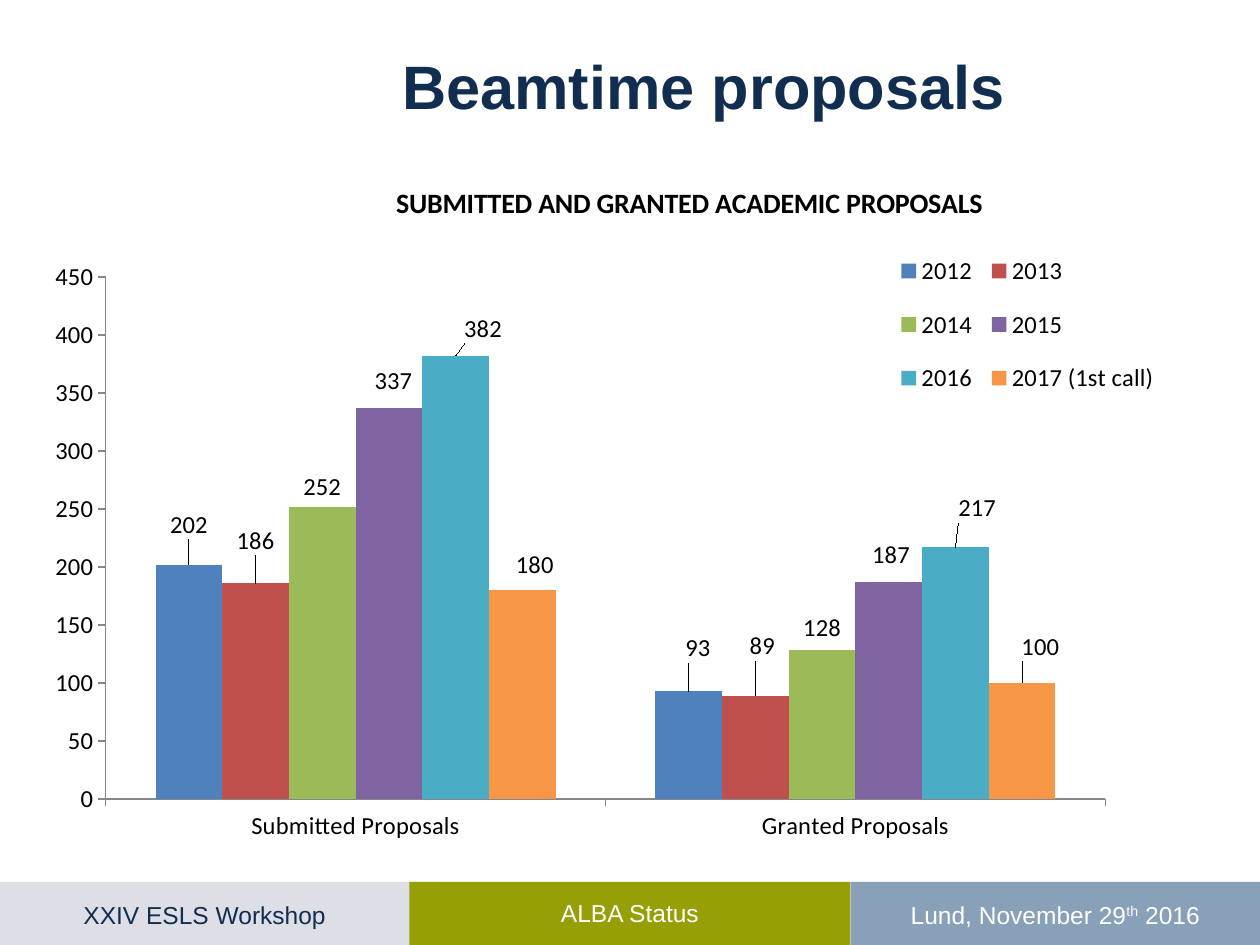
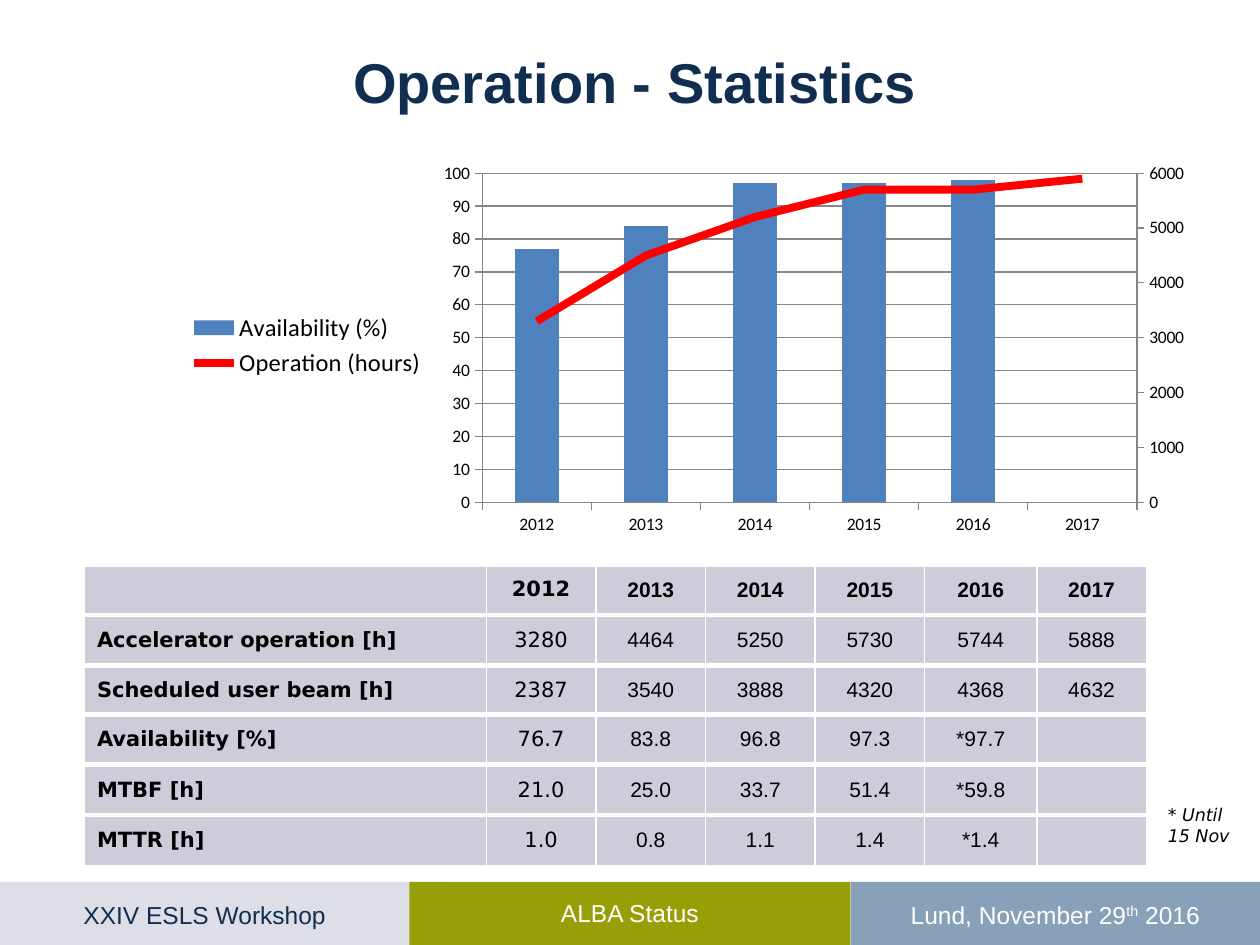
from dataclasses import dataclass

from lxml.etree import SubElement
from pptx import Presentation
from pptx.chart.data import CategoryChartData
from pptx.dml.color import RGBColor
from pptx.enum.chart import (XL_CHART_TYPE, XL_LABEL_POSITION, XL_LEGEND_POSITION,
                             XL_TICK_MARK)
from pptx.enum.shapes import MSO_SHAPE
from pptx.enum.text import MSO_ANCHOR, PP_ALIGN
from pptx.oxml import parse_xml
from pptx.oxml.ns import nsdecls, qn
from pptx.util import Inches, Pt


@dataclass(frozen=True)
class Theme:
    navy: str = "112E50"
    white: str = "FFFFFF"
    black: str = "000000"
    bands: tuple = ("DEDFE6", "979F07", "88A0B8")
    cell: str = "CDCDDA"
    axis: str = "868686"
    red: str = "FF0000"
    series: tuple = ("4F81BD", "C0504D", "9BBB59", "8064A2", "4BACC6", "F79646")
    head_font: str = "Arial"
    table_font: str = "DejaVu Sans"
    chart_font: str = "Calibri"
    footer_size: int = 14
    table_size: int = 12
    small_size: int = 10
    chart_size: int = 14
    chart_title_size: int = 16


T = Theme()


def rgb(value):
    return RGBColor.from_string(value)


def style(font, size, color, name, bold=False, italic=False):
    font.size, font.name = Pt(size), name
    font.bold, font.italic = bold, italic
    font.color.rgb = rgb(color)


# Text and footer
def add_text(s, at, runs, size, color, name=T.head_font, align=PP_ALIGN.CENTER,
             bold=False, italic=False):
    tf = s.shapes.add_textbox(*map(Inches, at)).text_frame
    tf.word_wrap = True
    p = tf.paragraphs[0]
    p.alignment = align
    for text in runs:
        p.add_run().text = text
    style(p.font, size, color, name, bold, italic)
    return p


def add_title(s, at, text, size):
    add_text(s, at, [text], size, T.navy, bold=True)


def add_footer(s):
    for left, width, color in zip((0, 3.25, 6.75), (3.5, 3.5, 3.25), T.bands):
        sp = s.shapes.add_shape(MSO_SHAPE.RECTANGLE, Inches(left), Inches(7),
                                Inches(width), Inches(0.5))
        sp.shadow.inherit = False
        sp.fill.solid()
        sp.fill.fore_color.rgb = rgb(color)
        sp.line.fill.background()
    add_text(s, (0, 7.09, 3.25, 0.33), ["XXIV ESLS Workshop"], T.footer_size, T.navy)
    add_text(s, (3.25, 7.08, 3.5, 0.34), ["ALBA Status"], T.footer_size, T.white)
    p = add_text(s, (6.75, 7.09, 3.25, 0.34), ["Lund, November 29", "th", " 2016"],
                 T.footer_size, T.white)
    p.runs[1].font._element.set("baseline", "30000")


# Chart parts
def set_layout(parent, x, y, w=None, h=None, after=None, inner=False, edge=True):
    """Place a chart part by fractions of the chart's size."""
    for old in parent.findall(qn("c:layout")):
        parent.remove(old)
    layout = parse_xml(f'<c:layout {nsdecls("c")}><c:manualLayout/></c:layout>')
    values = [("layoutTarget", "inner")] if inner else []
    if edge:
        values += [("xMode", "edge"), ("yMode", "edge")]
    values += [("x", x), ("y", y)]
    if w:
        values += [("w", w), ("h", h)]
    for tag, value in values:
        SubElement(layout[0], qn(f"c:{tag}")).set("val", str(value))
    if after:
        parent.find(qn(after)).addnext(layout)
    else:
        parent.insert(0, layout)


def style_axis(axis, size, grid=False, low=None, high=None, step=None):
    axis.has_major_gridlines = grid
    axis.major_tick_mark = XL_TICK_MARK.OUTSIDE
    axis.minor_tick_mark = XL_TICK_MARK.NONE
    axis.format.line.color.rgb = rgb(T.axis)
    style(axis.tick_labels.font, size, T.black, T.chart_font)
    if grid:
        axis.major_gridlines.format.line.color.rgb = rgb(T.axis)
    if step:
        axis.minimum_scale, axis.maximum_scale, axis.major_unit = low, high, step


def add_columns(s, at, cats, series, plot_at, legend_at):
    data = CategoryChartData()
    data.categories = cats
    for name, values in series:
        data.add_series(name, values)
    chart = s.shapes.add_chart(XL_CHART_TYPE.COLUMN_CLUSTERED,
                               *map(Inches, at), data).chart
    style(chart.font, T.small_size, T.black, T.chart_font)
    chart.has_title = False
    chart.has_legend = True
    chart.legend.position = XL_LEGEND_POSITION.RIGHT
    chart.legend.include_in_layout = False
    style(chart.legend.font, T.chart_size, T.black, T.chart_font)
    set_layout(chart.legend._element, *legend_at, after="c:legendPos")
    set_layout(chart.element.xpath(".//c:plotArea")[0], *plot_at, inner=True)
    plot = chart.plots[0]
    plot.vary_by_categories = False
    plot.gap_width, plot.overlap = 150, 0
    for ser, color in zip(plot.series, T.series):
        ser.invert_if_negative = False
        ser.format.fill.solid()
        ser.format.fill.fore_color.rgb = rgb(color)
    return chart


def set_chart_title(chart, text, x, y):
    chart.has_title = True
    p = chart.chart_title.text_frame.paragraphs[0]
    p.text = text
    style(p.font, T.chart_title_size, T.black, T.chart_font, bold=True)
    chart.chart_title.include_in_layout = True
    set_layout(chart.chart_title._element, x, y, after="c:tx")


def label_points(chart, offsets):
    """Label each column, moved by its (x, y) offset from the column's top."""
    for ser in chart.plots[0].series:
        ser.data_labels.show_value = True
        style(ser.data_labels.font, T.chart_size, T.black, T.chart_font)
        for i in range(len(ser.values)):
            label = ser.points[i].data_label
            style(label.font, T.chart_size, T.black, T.chart_font)
            label.position = XL_LABEL_POSITION.OUTSIDE_END
    for label, (x, y) in zip(chart.element.xpath(".//c:ser//c:dLbl"), offsets):
        set_layout(label, x, y, after="c:idx", edge=False)


def move_to_right_axis(chart, color, width, high, step):
    """Turn the last column series into a line on a second value axis."""
    bars = chart.element.xpath(".//c:barChart")[0]
    ser = bars.findall(qn("c:ser"))[-1]
    for tag in ("c:invertIfNegative", "c:spPr"):
        for old in ser.findall(qn(tag)):
            ser.remove(old)
    line = parse_xml(
        f'<c:lineChart {nsdecls("c")}><c:grouping val="standard"/><c:varyColors val="0"/>'
        '<c:marker val="1"/><c:axId val="5001"/><c:axId val="5002"/></c:lineChart>')
    line.insert(2, ser)
    bars.addnext(line)
    ser.find(qn("c:tx")).addnext(parse_xml(
        f'<c:marker {nsdecls("c")}><c:symbol val="none"/></c:marker>'))
    SubElement(ser, qn("c:smooth")).set("val", "0")
    fmt = chart.plots[1].series[0].format.line
    fmt.color.rgb, fmt.width = rgb(color), Pt(width)

    last_axis = chart.element.xpath(".//c:valAx")[-1]
    val_axis = parse_xml(
        f'<c:valAx {nsdecls("c", "a")}><c:axId val="5002"/><c:scaling>'
        f'<c:orientation val="minMax"/><c:max val="{high}"/><c:min val="0"/></c:scaling>'
        '<c:delete val="0"/><c:axPos val="r"/><c:numFmt formatCode="General" sourceLinked="0"/>'
        '<c:majorTickMark val="out"/><c:minorTickMark val="none"/><c:tickLblPos val="nextTo"/>'
        f'<c:spPr><a:ln><a:solidFill><a:srgbClr val="{T.axis}"/></a:solidFill></a:ln></c:spPr>'
        '<c:crossAx val="5001"/><c:crosses val="max"/><c:crossBetween val="between"/>'
        f'<c:majorUnit val="{step}"/></c:valAx>')
    cat_axis = parse_xml(
        f'<c:catAx {nsdecls("c")}><c:axId val="5001"/><c:scaling>'
        '<c:orientation val="minMax"/></c:scaling><c:delete val="1"/><c:axPos val="b"/>'
        '<c:crossAx val="5002"/><c:crosses val="autoZero"/></c:catAx>')
    last_axis.addnext(val_axis)
    val_axis.addnext(cat_axis)


# Table
def set_borders(cell, bottom):
    tc_pr = cell._tc.get_or_add_tcPr()
    for i, (side, width) in enumerate((("L", 1), ("R", 1), ("T", 3), ("B", bottom))):
        tc_pr.insert(i, parse_xml(
            f'<a:ln{side} {nsdecls("a")} w="{Pt(width)}"><a:solidFill>'
            f'<a:srgbClr val="{T.white}"/></a:solidFill></a:ln{side}>'))


def add_grid(s, at, widths, heights, rows):
    tbl = s.shapes.add_table(len(rows), len(widths), *map(Inches, at)).table
    tbl.horz_banding = False
    for col, width in zip(tbl.columns, widths):
        col.width = Inches(width)
    for r, (row, height) in enumerate(zip(rows, heights)):
        tbl.rows[r].height = Inches(height)
        for c, text in enumerate(row):
            cell = tbl.cell(r, c)
            cell.fill.solid()
            cell.fill.fore_color.rgb = rgb(T.cell)
            cell.vertical_anchor = MSO_ANCHOR.MIDDLE
            set_borders(cell, 1 if r == len(rows) - 1 else 3)
            p = cell.text_frame.paragraphs[0]
            p.text = text
            p.alignment = PP_ALIGN.CENTER if c else PP_ALIGN.LEFT
            style(p.font, T.table_size, T.black, T.table_font, bold=r == 0 or c == 0)
            if c > 1:  # right-to-left figures take the complex-script font
                p._p.get_or_add_pPr().set("rtl", "1")
                for run in p.runs:
                    SubElement(run._r.get_or_add_rPr(), qn("a:cs")).set(
                        "typeface", T.head_font)


# Slides
def proposals_slide(s):
    add_footer(s)
    chart = add_columns(
        s, (0.42, 1.25, 9.1, 5.62), ["Submitted Proposals", "Granted Proposals"],
        [("2012", (202, 93)), ("2013", (186, 89)), ("2014", (252, 128)),
         ("2015", (337, 187)), ("2016", (382, 217)), ("2017 (1st call)", (180, 100))],
        plot_at=(0.046, 0.169, 0.872, 0.737), legend_at=(0.73, 0.106, 0.24, 0.26))
    set_chart_title(chart, "SUBMITTED AND GRANTED ACADEMIC PROPOSALS", 0.295, 0.03)
    style_axis(chart.category_axis, T.chart_size)
    style_axis(chart.value_axis, T.chart_size, low=0, high=450, step=50)
    label_points(chart, [(0, -0.028), (0.008, -0.032), (0, -0.032), (0.006, -0.042),
                         (0, 0), (0, -0.004), (0.004, -0.01), (0.002, -0.01),
                         (0.024, -0.01), (0.019, -0.027), (0.011, -0.007),
                         (0.016, -0.023)])
    add_title(s, (2, 0.33, 7.17, 0.69), "Beamtime proposals", 35)


def statistics_slide(s):
    add_footer(s)
    years = ["2012", "2013", "2014", "2015", "2016", "2017"]
    add_grid(s, (0.67, 4.48, 8.42, 2.4), [3.19] + [0.87] * 4 + [0.89, 0.87],
             [0.4, 0.4, 0.39, 0.4, 0.4, 0.4], [
        ["", *years],
        ["Accelerator operation [h]", "3280", "4464", "5250", "5730", "5744", "5888"],
        ["Scheduled user beam [h]", "2387", "3540", "3888", "4320", "4368", "4632"],
        ["Availability [%]", "76.7", "83.8", "96.8", "97.3", "97.7*", ""],
        ["MTBF [h]", "21.0", "25.0", "33.7", "51.4", "59.8*", ""],
        ["MTTR [h]", "1.0", "0.8", "1.1", "1.4", "1.4*", ""]])
    chart = add_columns(
        s, (1.08, 1.25, 8.72, 2.99), years,
        [("Availability (%)", (77, 84, 97, 97, 98, None)),
         ("Operation (hours)", (3300, 4500, 5200, 5700, 5700, 5900))],
        plot_at=(0.315, 0.042, 0.596, 0.876), legend_at=(0.046, 0.4, 0.22, 0.2))
    style_axis(chart.category_axis, T.small_size)
    style_axis(chart.value_axis, T.small_size, grid=True, low=0, high=100, step=10)
    move_to_right_axis(chart, T.red, 4.5, high=6000, step=1000)
    add_text(s, (9.17, 6.33, 0.83, 0.44), ["* Until 15 Nov"], T.small_size, T.black,
             T.table_font, PP_ALIGN.LEFT, italic=True)
    add_title(s, (1.33, 0.33, 7.42, 0.69), "Operation - Statistics", 32)


def main():
    prs = Presentation()
    prs.slide_width, prs.slide_height = Inches(10), Inches(7.5)
    for build in (proposals_slide, statistics_slide):
        build(prs.slides.add_slide(prs.slide_layouts[6]))
    prs.save("out.pptx")


if __name__ == "__main__":
    main()
